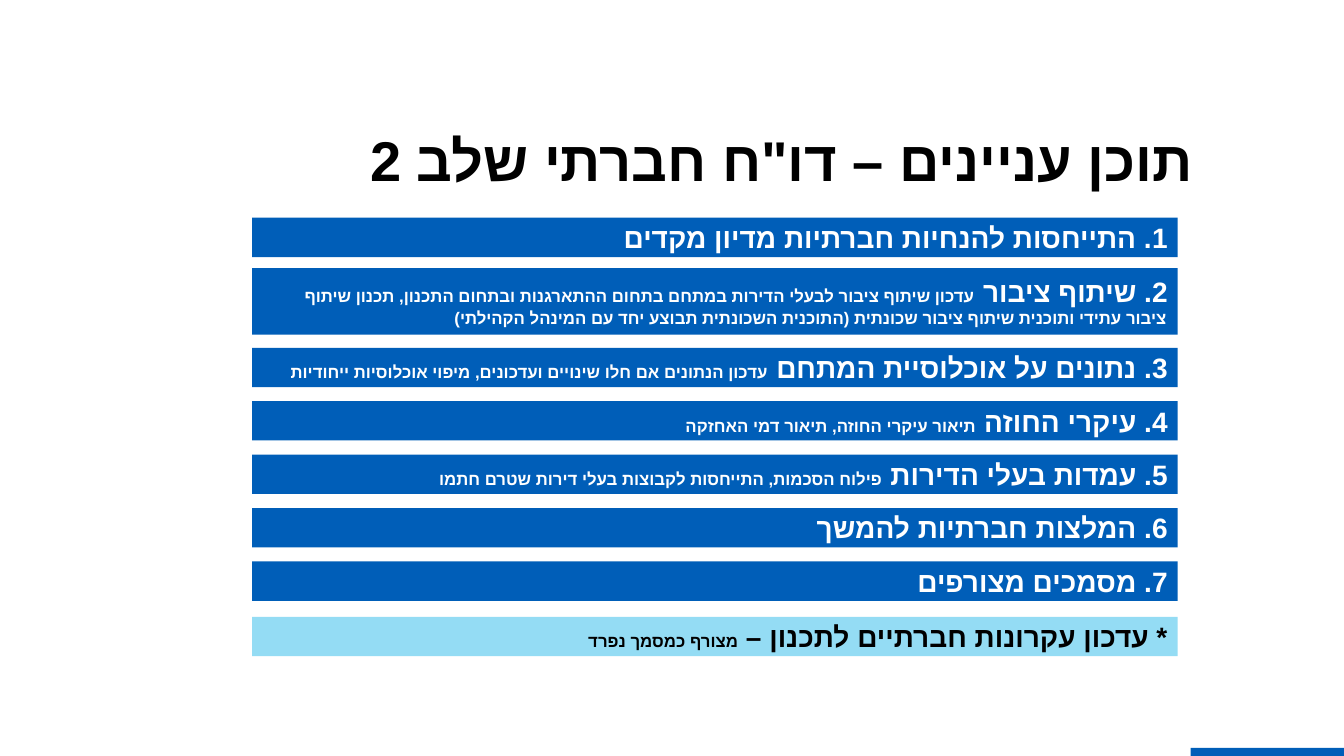
from dataclasses import dataclass
from lxml.etree import SubElement
from pptx import Presentation
from pptx.dml.color import RGBColor
from pptx.enum.lang import MSO_LANGUAGE_ID
from pptx.enum.shapes import MSO_SHAPE
from pptx.enum.text import MSO_ANCHOR, MSO_AUTO_SIZE, PP_ALIGN
from pptx.oxml.ns import qn
from pptx.util import Inches, Pt


@dataclass(frozen=True)
class Theme:
    blue = RGBColor(0x00, 0x5E, 0xB8)
    sky = RGBColor(0x94, 0xDC, 0xF4)
    white = RGBColor(0xFF, 0xFF, 0xFF)
    black = RGBColor(0x00, 0x00, 0x00)
    font = "Arial"
    title = Pt(40)
    head = Pt(20)
    note = Pt(12)


def write(para, parts, color, align):
    """Fill a right-to-left paragraph with (text, size) runs."""
    para.alignment = align
    para._p.get_or_add_pPr().set("rtl", "1")
    for text, size in parts:
        run = para.add_run()
        run.text = text
        style = {"name": Theme.font, "size": size, "bold": True,
                 "language_id": MSO_LANGUAGE_ID.HEBREW}
        for key, value in style.items():
            setattr(run.font, key, value)
        run.font.color.rgb = color
        SubElement(run._r.get_or_add_rPr(), qn("a:cs"), typeface=Theme.font)


def add_bar(left, top, width, height, fill):
    bar = slide.shapes.add_shape(
        MSO_SHAPE.RECTANGLE, *map(Inches, (left, top, width, height)))
    bar.shadow.inherit = False
    bar.fill.solid()
    bar.fill.fore_color.rgb = fill
    bar.line.fill.background()
    return bar


deck = Presentation()
deck.slide_width, deck.slide_height = Inches(13.33), Inches(7.5)
slide = deck.slides.add_slide(deck.slide_layouts[5])

title = slide.shapes.title
place = {"left": 3.48, "top": 0.78, "width": 8.54, "height": 0.88}
for key, value in place.items():
    setattr(title, key, Inches(value))
frame = title.text_frame
setup = {"margin_left": 0, "margin_right": 0, "margin_top": 0,
         "margin_bottom": 0, "word_wrap": True,
         "vertical_anchor": MSO_ANCHOR.TOP,
         "auto_size": MSO_AUTO_SIZE.SHAPE_TO_FIT_TEXT}
for key, value in setup.items():
    setattr(frame, key, value)
frame.paragraphs[0].line_spacing = 1.7
write(frame.paragraphs[0], [("תוכן עניינים – דו\"ח חברתי שלב 2", Theme.title)],
      Theme.black, PP_ALIGN.CENTER)

topics = [
    ("1. התייחסות להנחיות חברתיות מדיון מקדים", ""),
    ("2. שיתוף ציבור ",
     "עדכון שיתוף ציבור לבעלי הדירות במתחם בתחום ההתארגנות ובתחום התכנון, "
     "תכנון שיתוף ציבור עתידי ותוכנית שיתוף ציבור שכונתית "
     "(התוכנית השכונתית תבוצע יחד עם המינהל הקהילתי)"),
    ("3. נתונים על אוכלוסיית המתחם ",
     "עדכון הנתונים אם חלו שינויים ועדכונים, מיפוי אוכלוסיות ייחודיות "),
    ("4. עיקרי החוזה ", "תיאור עיקרי החוזה, תיאור דמי האחזקה"),
    ("5. עמדות בעלי הדירות ",
     "פילוח הסכמות, התייחסות לקבוצות בעלי דירות שטרם חתמו"),
    ("6. המלצות חברתיות להמשך", ""),
    ("7. מסמכים מצורפים", ""),
    ("* עדכון עקרונות חברתיים לתכנון – ", "מצורף כמסמך נפרד"),
]
row, step = 0.39, 0.53
tops = [2.16, 2.66] + [3.45 + step * i for i in range(5)] + [6.12]
for (head, note), top in zip(topics, tops):
    extra = head.startswith("*")
    height = 0.66 if head.startswith("2") else row
    bar = add_bar(2.5, top, 9.18, height, Theme.sky if extra else Theme.blue)
    bar.text_frame.word_wrap = True
    bar.text_frame.vertical_anchor = MSO_ANCHOR.MIDDLE
    parts = [(head, Theme.head)] + ([(note, Theme.note)] if note else [])
    write(bar.text_frame.paragraphs[0], parts,
          Theme.black if extra else Theme.white, PP_ALIGN.RIGHT)

add_bar(11.81, 7.42, 1.53, 0.09, Theme.blue)

deck.save("out.pptx")
